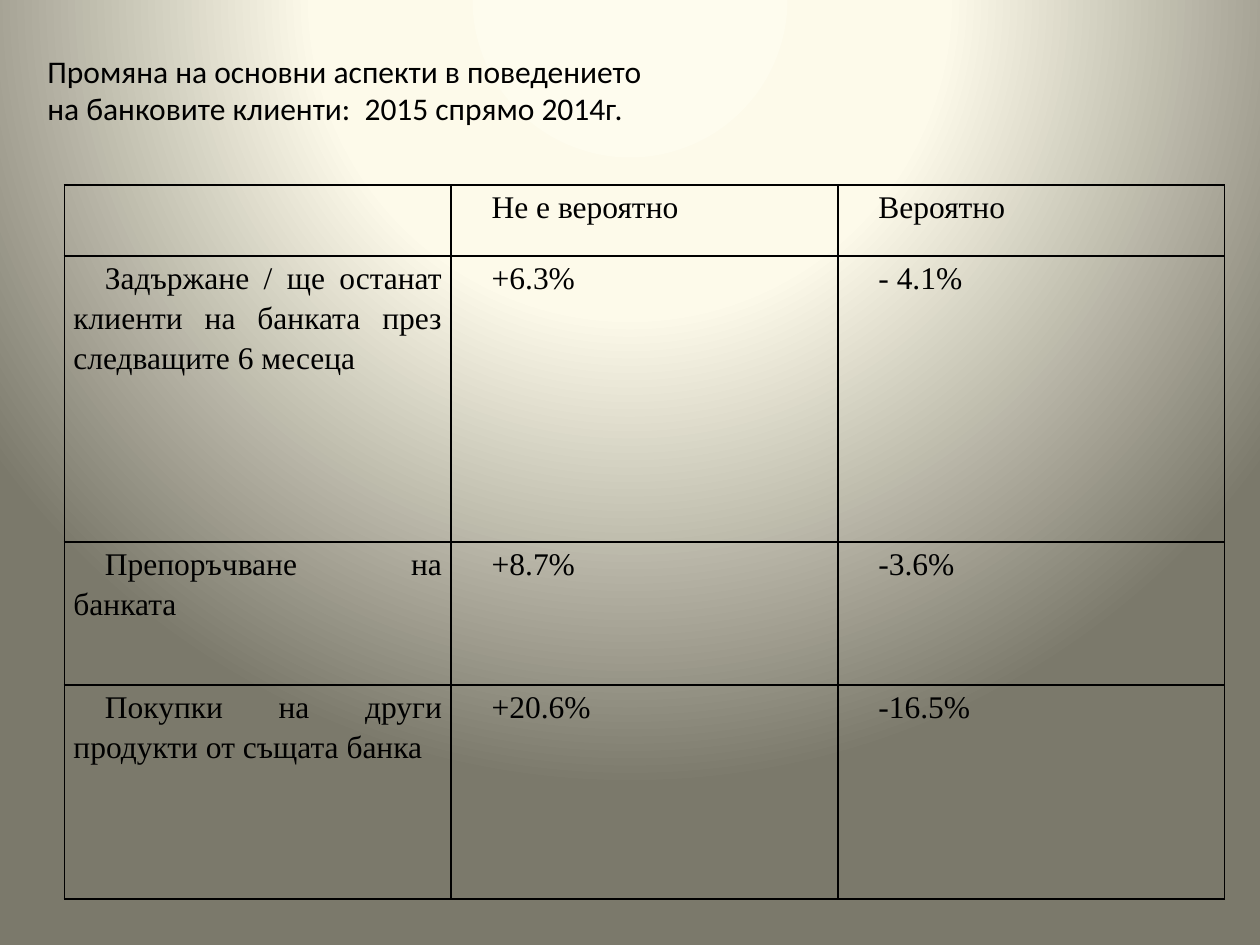
from dataclasses import dataclass

from pptx import Presentation
from pptx.dml.color import RGBColor
from pptx.enum.text import MSO_AUTO_SIZE, PP_ALIGN
from pptx.oxml import parse_xml
from pptx.oxml.ns import nsdecls
from pptx.util import Pt

COLORS = {"text": "000000", "border": "000000",
          "glow": "FEFCEE", "cream": "FDFAEA", "olive": "7B796B"}


@dataclass
class Row:
    cells: tuple[str, str, str]
    units: int  # height in multiples of the header row


ROWS = [
    Row(("", "Не е вероятно", "Вероятно"), 1),
    Row(("Задържане / ще останат клиенти на банката през следващите 6 месеца",
         "+6.3%", "- 4.1%"), 4),
    Row(("Препоръчване на банката", "+8.7%", "-3.6%"), 2),
    Row(("Покупки на други продукти от същата банка", "+20.6%", "-16.5%"), 3),
]
UNIT, COL_WIDTH = 40.82, 221


def write(tf, text: str, *, font: str, size: float = 18, align=PP_ALIGN.LEFT,
          spacing: float = 1.0, indent: float = 0) -> None:
    p = tf.paragraphs[0]
    p.alignment = align
    p.line_spacing = spacing
    if indent:
        pPr = p._p.get_or_add_pPr()
        pPr.set("marL", "0")
        pPr.set("indent", str(Pt(indent)))
    if not text:
        p.font.size = Pt(size)
        return
    r = p.add_run()
    r.text = text
    r.font.name, r.font.size, r.font.bold = font, Pt(size), False
    r.font.color.rgb = RGBColor.from_string(COLORS["text"])


def set_background(s) -> None:
    stops = "".join(
        f'<a:gs pos="{pos * 1000}"><a:srgbClr val="{COLORS[name]}"/></a:gs>'
        for pos, name in ((0, "glow"), (40, "cream"), (100, "olive")))
    s._element.cSld.insert(0, parse_xml(
        f'<p:bg {nsdecls("p", "a")}><p:bgPr><a:gradFill rotWithShape="1">'
        f'<a:gsLst>{stops}</a:gsLst><a:path path="circle">'
        '<a:fillToRect l="50000" t="-80000" r="50000" b="180000"/></a:path>'
        '</a:gradFill><a:effectLst/></p:bgPr></p:bg>'))


def set_borders(cell, width: float = 1) -> None:
    tcPr = cell._tc.get_or_add_tcPr()
    for i, side in enumerate(("lnL", "lnR", "lnT", "lnB")):
        tcPr.insert(i, parse_xml(
            f'<a:{side} {nsdecls("a")} w="{Pt(width)}"><a:solidFill>'
            f'<a:srgbClr val="{COLORS["border"]}"/></a:solidFill></a:{side}>'))


def add_behaviour_table(s, rows: list[Row], left: float, top: float) -> None:
    n_cols = len(rows[0].cells)
    height = UNIT * sum(row.units for row in rows)
    table = s.shapes.add_table(len(rows), n_cols, Pt(left), Pt(top),
                               Pt(COL_WIDTH * n_cols), Pt(height)).table
    table.first_row = table.horz_banding = False
    for col in table.columns:
        col.width = Pt(COL_WIDTH)
    for i, row in enumerate(rows):
        table.rows[i].height = Pt(UNIT * row.units)
        for j, text in enumerate(row.cells):
            cell = table.cell(i, j)
            cell.margin_left = cell.margin_right = Pt(5.2)
            cell.margin_top = cell.margin_bottom = Pt(0)
            cell.fill.background()
            set_borders(cell)
            write(cell.text_frame, text, font="Times New Roman",
                  align=PP_ALIGN.JUSTIFY, spacing=1.15, indent=18)


def main() -> None:
    prs = Presentation()
    prs.slide_width, prs.slide_height = Pt(720), Pt(540)
    s = prs.slides.add_slide(prs.slide_layouts[6])
    set_background(s)

    # Likelihood table
    add_behaviour_table(s, ROWS, 36.8, 105.6)

    # Heading
    tf = s.shapes.add_textbox(Pt(20), Pt(26), Pt(360), Pt(51)).text_frame
    tf.word_wrap = True
    tf.auto_size = MSO_AUTO_SIZE.SHAPE_TO_FIT_TEXT
    write(tf, "Промяна на основни аспекти в поведението на банковите клиенти:  "
              "2015 спрямо 2014г.", font="Calibri")

    prs.save("out.pptx")


if __name__ == "__main__":
    main()
